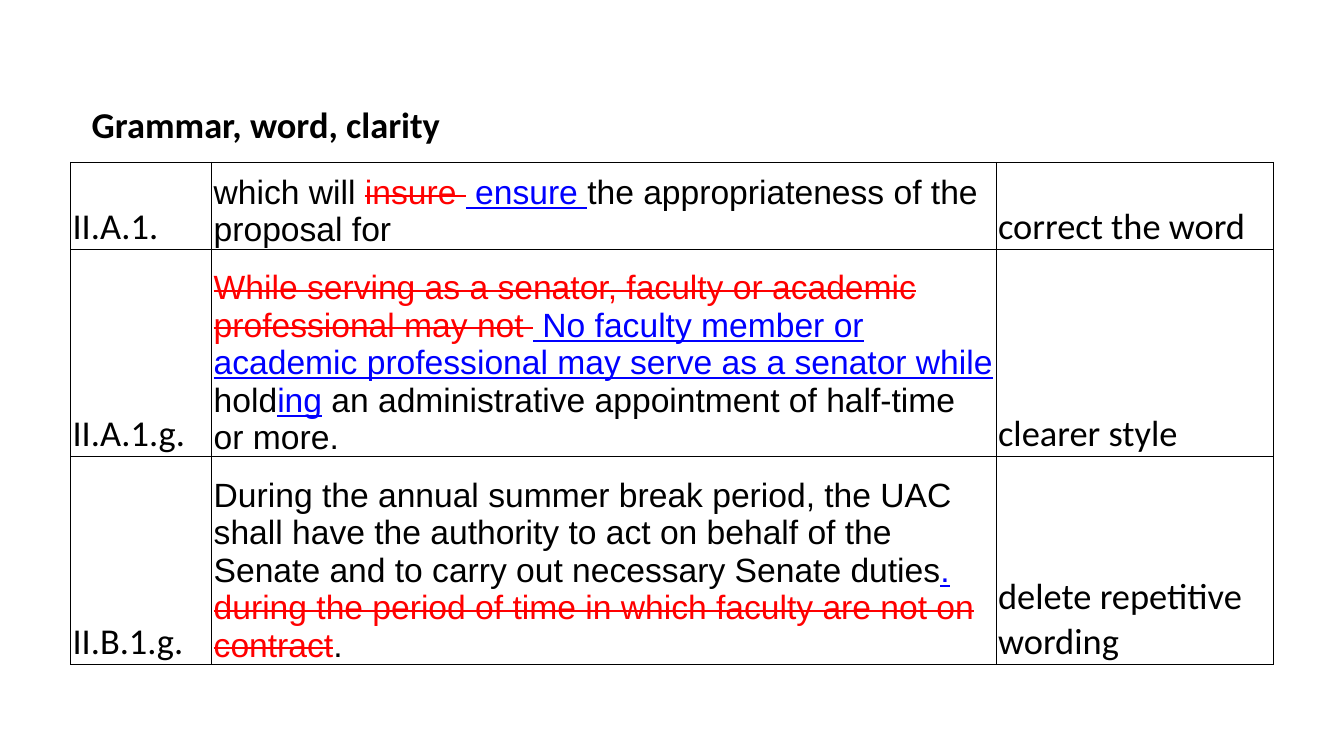
from lxml import etree
from pptx import Presentation
from pptx.dml.color import RGBColor
from pptx.enum.text import MSO_ANCHOR
from pptx.oxml.ns import qn
from pptx.util import Inches, Pt

BOTTOM = MSO_ANCHOR.BOTTOM
COLORS = {"keep": "000000", "delete": "FF0000", "insert": "0000FF"}
COL_WIDTHS = [1.4, 7.78, 2.75]
ROW_HEIGHTS = [0.69, 0.86, 2.06, 2.06]

CHANGES = [
    ("II.A.1.", [
        ("which will ", "keep"),
        ("insure ", "delete"),
        (" ensure ", "insert"),
        ("the appropriateness of the proposal for", "keep"),
    ], "correct the word"),
    ("II.A.1.g.", [
        ("While serving as a senator, faculty or academic professional may not ", "delete"),
        (" No faculty member or academic professional may serve as a senator while ", "insert"),
        ("hold", "keep"),
        ("ing", "insert"),
        (" an administrative appointment of half-time or more.", "keep"),
    ], "clearer style"),
    ("II.B.1.g.", [
        ("During the annual summer break period, the UAC shall have the authority to act "
         "on behalf of the Senate and to carry out necessary Senate duties", "keep"),
        (".", "insert"),
        (" ", "keep"),
        ("during the period of time in which faculty are not on contract", "delete"),
        (".", "keep"),
    ], "delete repetitive wording"),
]


def add_run(p, text, font, size, kind="keep", bold=False):
    r = p.add_run()
    r.text = text
    r.font.name = font
    r.font.size = Pt(size)
    r.font.bold = bold
    r.font.color.rgb = RGBColor.from_string(COLORS[kind])
    if kind == "insert":
        r.font.underline = True
    if kind == "delete":
        r._r.get_or_add_rPr().set("strike", "sngStrike")


def set_borders(cell, sides):
    tcPr = cell._tc.get_or_add_tcPr()
    for side in ("L", "R", "T", "B"):
        ln = etree.SubElement(tcPr, qn("a:ln" + side), w=str(Pt(0.5)))
        if side in sides:
            fill = etree.SubElement(ln, qn("a:solidFill"))
            etree.SubElement(fill, qn("a:srgbClr"), val=COLORS["keep"])
        else:
            etree.SubElement(ln, qn("a:noFill"))


prs = Presentation()
prs.slide_width = Inches(13.33)
prs.slide_height = Inches(7.5)
s = prs.slides.add_slide(prs.slide_layouts[6])

table = s.shapes.add_table(
    len(ROW_HEIGHTS), len(COL_WIDTHS), Inches(0.7), Inches(0.92),
    Inches(sum(COL_WIDTHS)), Inches(sum(ROW_HEIGHTS))).table
table.first_row = False
table.horz_banding = False
for col, width in zip(table.columns, COL_WIDTHS):
    col.width = Inches(width)
for row, height in zip(table.rows, ROW_HEIGHTS):
    row.height = Inches(height)

for i, row in enumerate(table.rows):
    for cell in row.cells:
        set_borders(cell, "B" if i == 0 else "LRTB")
        cell.fill.background()

title = table.cell(0, 0)
title.merge(table.cell(0, 1))
title.margin_left = title.margin_right = Inches(0.21)
title.margin_top = title.margin_bottom = Inches(0.11)
add_run(title.text_frame.paragraphs[0], "Grammar, word, clarity", "Calibri", 26, bold=True)

for i, (section, edits, reason) in enumerate(CHANGES, start=1):
    for cell in table.rows[i].cells:
        cell.vertical_anchor = BOTTOM
        cell.margin_left = cell.margin_right = cell.margin_top = Inches(0.02)
        cell.margin_bottom = 0
    section_p, edits_p, reason_p = [c.text_frame.paragraphs[0] for c in table.rows[i].cells]
    add_run(section_p, section, "Calibri", 26)
    for text, kind in edits:
        add_run(edits_p, text, "Arial", 24, kind)
    add_run(reason_p, reason, "Calibri", 26)

prs.save("out.pptx")
